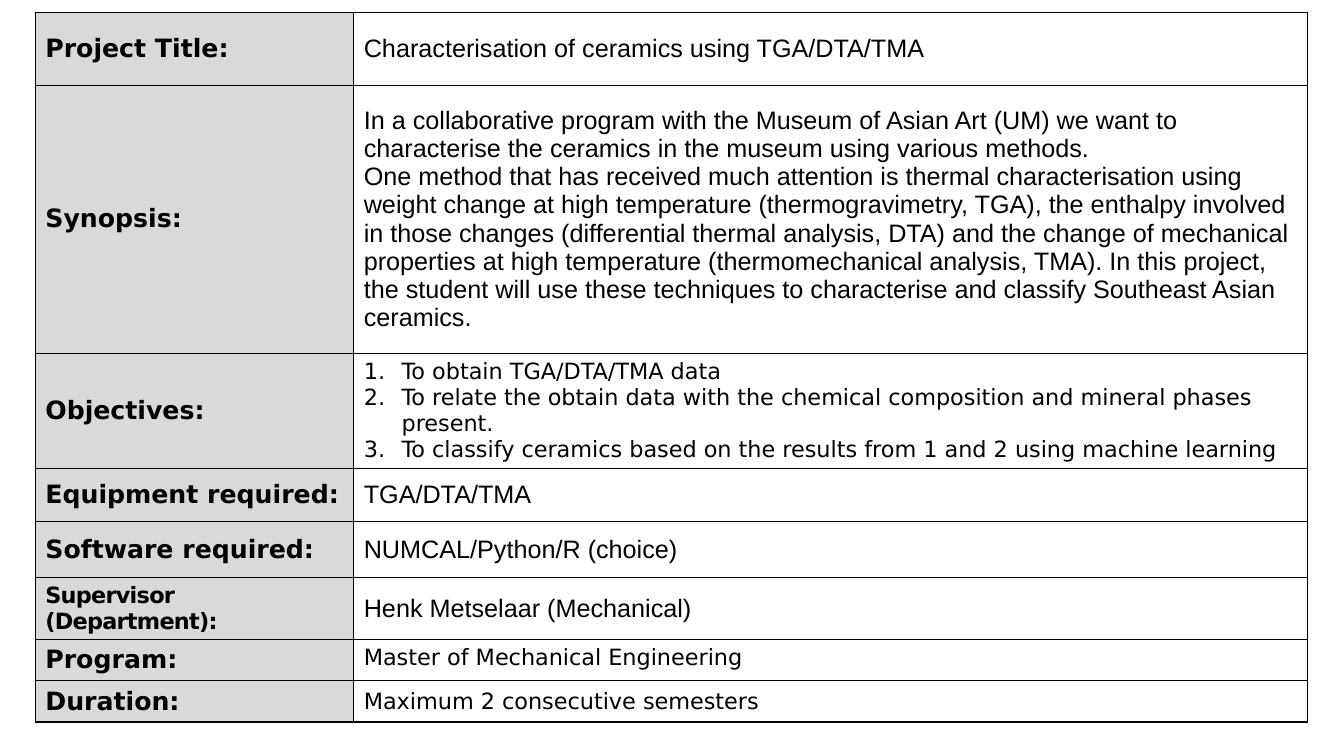
from dataclasses import dataclass

from lxml import etree
from pptx import Presentation
from pptx.dml.color import RGBColor
from pptx.enum.text import MSO_ANCHOR
from pptx.oxml.ns import qn
from pptx.table import _Cell
from pptx.text.text import _Paragraph
from pptx.util import Pt

MIDDLE, TOP = MSO_ANCHOR.MIDDLE, MSO_ANCHOR.TOP
COLORS = {"ink": "000000", "label": "D9D9D9"}
SANS, ARIAL = "DejaVu Sans", "Arial"
TABLE_LEFT, TABLE_TOP = 25.2, 8.7
COLUMN_WIDTHS = (227.5, 681.1)
BORDER_WIDTH = 0.96
LIST_INDENT = 27


@dataclass
class ProjectRow:
    label: str
    paragraphs: tuple[str, ...]
    height: float
    font: str = ARIAL
    size: float = 18
    numbered: bool = False
    anchor: MSO_ANCHOR = MIDDLE


ROWS = (
    ProjectRow("Project Title:", ("Characterisation of ceramics using TGA/DTA/TMA",), 52.2),
    ProjectRow("Synopsis:", (
        "In a collaborative program with the Museum of Asian Art (UM) we want to "
        "characterise the ceramics in the museum using various methods.",
        "One method that has received much attention is thermal characterisation using "
        "weight change at high temperature (thermogravimetry, TGA), the enthalpy involved "
        "in those changes (differential thermal analysis, DTA) and the change of mechanical "
        "properties at high temperature (thermomechanical analysis, TMA). In this project, "
        "the student will use these techniques to characterise and classify Southeast Asian "
        "ceramics.",
    ), 191.5),
    ProjectRow("Objectives:", (
        "To obtain TGA/DTA/TMA data",
        "To relate the obtain data with the chemical composition and mineral phases present.",
        "To classify ceramics based on the results from 1 and 2 using machine learning",
    ), 82.1, SANS, 16, numbered=True),
    ProjectRow("Equipment required:", ("TGA/DTA/TMA",), 37.8),
    ProjectRow("Software required:", ("NUMCAL/Python/R (choice)",), 40.3),
    ProjectRow("Supervisor (Department):", ("Henk Metselaar (Mechanical)",), 44.3),
    ProjectRow("Program:", ("Master of Mechanical Engineering",), 29.5, SANS, 16, anchor=TOP),
    ProjectRow("Duration:", ("Maximum 2 consecutive semesters",), 29.5, SANS, 16),
)


def add_run(paragraph: _Paragraph, text: str, *, font: str = SANS, size: float = 18,
            bold: bool = False, spacing: float = 0) -> None:
    """Add formatted text; spacing is the gap between letters in points."""
    run = paragraph.add_run()
    run.text = text
    run.font.name = font
    run.font.size = Pt(size)
    run.font.bold = bold
    run.font.color.rgb = RGBColor.from_string(COLORS["ink"])
    if spacing:
        run.font._element.set("spc", str(round(spacing * 100)))


def add_number(paragraph: _Paragraph) -> None:
    properties = paragraph._p.get_or_add_pPr()
    properties.set("marL", str(Pt(LIST_INDENT)))
    properties.set("indent", str(-Pt(LIST_INDENT)))
    etree.SubElement(properties, qn("a:buFont"), typeface="+mj-lt")
    etree.SubElement(properties, qn("a:buAutoNum"), type="arabicPeriod")


def add_borders(cell: _Cell) -> None:
    properties = cell._tc.get_or_add_tcPr()
    for side in ("L", "R", "T", "B"):
        line = etree.SubElement(properties, qn(f"a:ln{side}"), w=str(Pt(BORDER_WIDTH)))
        fill = etree.SubElement(line, qn("a:solidFill"))
        etree.SubElement(fill, qn("a:srgbClr"), val=COLORS["ink"])


def fill_label(cell: _Cell, label: str) -> None:
    cell.vertical_anchor = MIDDLE
    add_borders(cell)
    cell.fill.solid()
    cell.fill.fore_color.rgb = RGBColor.from_string(COLORS["label"])
    paragraph = cell.text_frame.paragraphs[0]
    name, bracket, department = label.partition(" (")
    if bracket:
        for text, size in ((name, 16), (" ", 5), (f"({department}", 16)):
            add_run(paragraph, text, size=size, bold=True, spacing=-0.5)
    else:
        add_run(paragraph, label, bold=True)


def fill_value(cell: _Cell, row: ProjectRow) -> None:
    cell.vertical_anchor = row.anchor
    add_borders(cell)
    cell.fill.background()
    frame = cell.text_frame
    for index, text in enumerate(row.paragraphs):
        paragraph = frame.add_paragraph() if index else frame.paragraphs[0]
        if row.numbered:
            add_number(paragraph)
        add_run(paragraph, text, font=row.font, size=row.size)


def main() -> None:
    presentation = Presentation()
    presentation.slide_width, presentation.slide_height = Pt(960), Pt(540)
    slide = presentation.slides.add_slide(presentation.slide_layouts[6])
    table = slide.shapes.add_table(
        len(ROWS), len(COLUMN_WIDTHS), Pt(TABLE_LEFT), Pt(TABLE_TOP),
        Pt(sum(COLUMN_WIDTHS)), Pt(sum(row.height for row in ROWS)),
    ).table
    table.first_row = table.horz_banding = False
    for column, width in zip(table.columns, COLUMN_WIDTHS):
        column.width = Pt(width)
    for index, row in enumerate(ROWS):
        table.rows[index].height = Pt(row.height)
        fill_label(table.cell(index, 0), row.label)
        fill_value(table.cell(index, 1), row)
    presentation.save("out.pptx")


if __name__ == "__main__":
    main()
